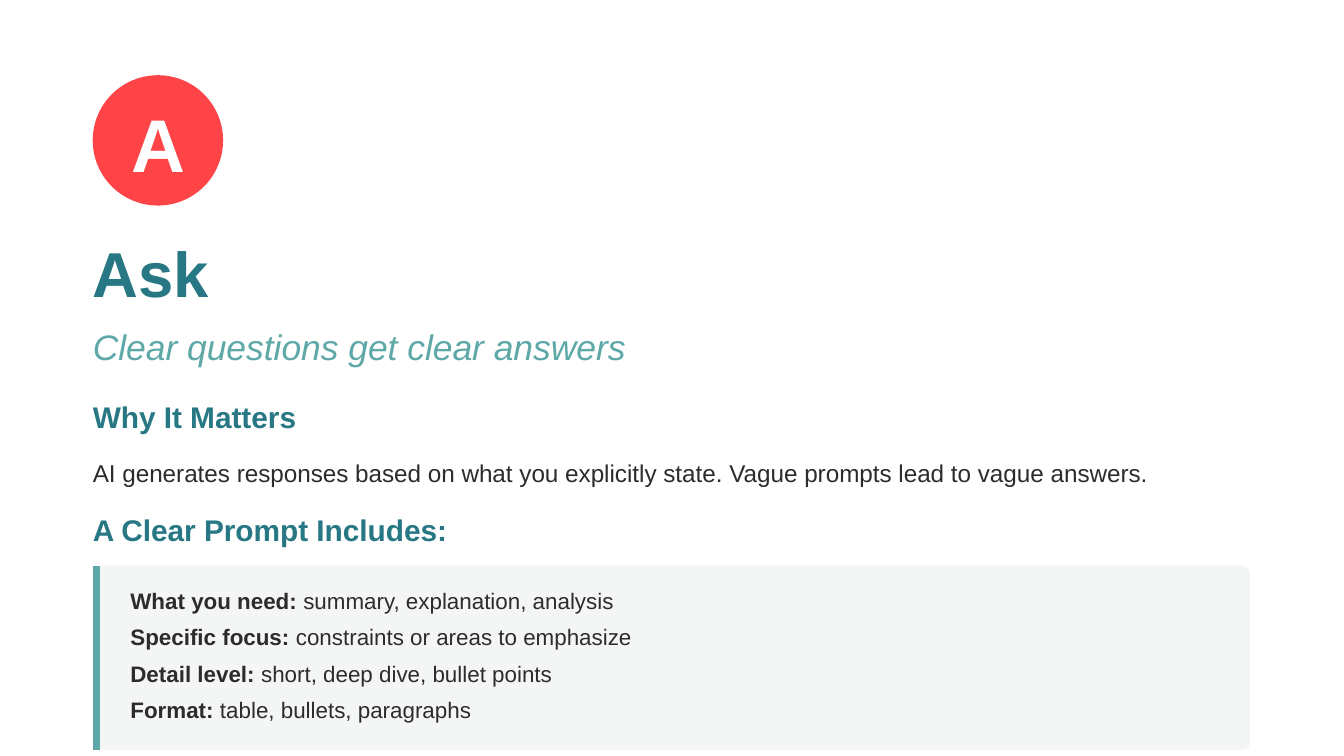
from pptx import Presentation, util as u
from pptx.dml.color import RGBColor
from pptx.enum import shapes, text
from pptx.oxml import ns
from lxml import etree

# Content
BADGE = "A"
TITLE = "Ask"
TAGLINE = "Clear questions get clear answers"
REASON_HEADING = "Why It Matters"
REASON = ("AI generates responses based on what you explicitly state. "
          "Vague prompts lead to vague answers.")
CHECKLIST_HEADING = "A Clear Prompt Includes:"
CHECKLIST = [
    ("What you need:", " summary, explanation, analysis"),
    ("Specific focus:", " constraints or areas to emphasize"),
    ("Detail level:", " short, deep dive, bullet points"),
    ("Format:", " table, bullets, paragraphs"),
]

COLORS = {"coral": "FE4447", "teal": "277884", "mint": "5EA8A7",
          "ink": "2C2C2C", "panel": "F4F6F6", "white": "FFFFFF"}
FONT = "Arial"

# Layout in inches, on a 16:9 slide
WIDTH = 10
HEIGHT = WIDTH * 9 / 16
LEFT, TEXT_WIDTH = 0.69, 8.78
BADGE_TOP, BADGE_SIZE = 0.56, 0.97
PANEL_TOP, PANEL_WIDTH, PANEL_HEIGHT = 4.21, 8.61, 1.37
PAD_X, PAD_Y = 0.28, 0.14
RULE_WIDTH = 3.75

prs = Presentation()
prs.slide_width, prs.slide_height = u.Inches(WIDTH), u.Inches(HEIGHT)
slide = prs.slides.add_slide(prs.slide_layouts[1])


def color(name):
    return RGBColor.from_string(COLORS[name])


def write(paragraphs, box, holder=None, size=12, fill="ink", bold=False,
          italic=False, align=text.PP_ALIGN.LEFT, line=None, after=0):
    """Each paragraph is a string, or a (bold label, plain rest) pair."""
    place = [u.Inches(v) for v in box]
    if holder is None:
        holder = slide.shapes.add_textbox(*place)
    holder.left, holder.top, holder.width, holder.height = place
    frame = holder.text_frame
    frame.word_wrap = True
    frame.auto_size = text.MSO_AUTO_SIZE.NONE
    frame.vertical_anchor = text.MSO_ANCHOR.TOP
    frame.margin_left = frame.margin_right = 0
    frame.margin_top = frame.margin_bottom = 0
    for i, content in enumerate(paragraphs):
        para = frame.add_paragraph() if i else frame.paragraphs[0]
        para.alignment = align
        para.space_before = u.Pt(0 if line else round(size * 0.1, 1))
        para.space_after = u.Pt(after)
        para.line_spacing = u.Pt(line) if line else 1.0
        pair = isinstance(content, tuple)
        for j, words in enumerate(content if pair else (content,)):
            run = para.add_run()
            run.text = words
            run.font.name, run.font.size = FONT, u.Pt(size)
            run.font.bold = j == 0 if pair else bold
            run.font.italic = italic
            run.font.color.rgb = color(fill)
    return holder


def add_block(kind, box, fill):
    block = slide.shapes.add_shape(kind, *[u.Inches(v) for v in box])
    block.shadow.inherit = False
    block.fill.solid()
    block.fill.fore_color.rgb = color(fill)
    block.line.fill.background()
    return block


# Letter badge: a square rounded into a circle
badge = add_block(shapes.MSO_SHAPE.ROUNDED_RECTANGLE,
                  (LEFT, BADGE_TOP, BADGE_SIZE, BADGE_SIZE), "coral")
badge.adjustments[0] = 0.5
letter_w, letter_h = 0.41, 0.64
write([BADGE], (LEFT + (BADGE_SIZE - letter_w) / 2, BADGE_TOP + (BADGE_SIZE - letter_h) / 2,
                letter_w, letter_h),
      size=40, fill="white", bold=True, align=text.PP_ALIGN.CENTER)

# Title, tagline and reason
write([TITLE], (LEFT, 1.74, TEXT_WIDTH, 0.54), slide.shapes.title,
      size=34, fill="teal", bold=True, after=10)
write([TAGLINE], (LEFT, 2.42, TEXT_WIDTH, 0.3), size=19, fill="mint", italic=True)
for heading, top in ((REASON_HEADING, 2.97), (CHECKLIST_HEADING, 3.81)):
    write([heading], (LEFT, top, TEXT_WIDTH, 0.26), size=16, fill="teal", bold=True, after=10)
write([REASON], (LEFT, 3.37, TEXT_WIDTH, 0.25), size=13, line=18.2, after=14)

# Checklist panel with its accent rule
panel = add_block(shapes.MSO_SHAPE.ROUNDED_RECTANGLE,
                  (LEFT, PANEL_TOP, PANEL_WIDTH, PANEL_HEIGHT), "panel")
panel.adjustments[0] = 0.04
rule_x = u.Inches(LEFT) + u.Pt(RULE_WIDTH / 2)
rule = slide.shapes.add_connector(shapes.MSO_CONNECTOR.STRAIGHT, rule_x, u.Inches(PANEL_TOP),
                                  rule_x, u.Inches(PANEL_TOP + PANEL_HEIGHT))
rule.line.color.rgb = color("mint")
rule.line.width = u.Pt(RULE_WIDTH)
etree.SubElement(rule._element.spPr, ns.qn("a:effectLst"))

# Checklist, raised above the panel and without bullets
checklist = write(CHECKLIST, (LEFT + PAD_X, PANEL_TOP + PAD_Y, 8.28, PANEL_HEIGHT - 2 * PAD_Y),
                  slide.placeholders[1], size=12, line=15.6, after=4)
for para in checklist.text_frame.paragraphs:
    props = para._p.get_or_add_pPr()
    props.set("marL", "0")
    props.set("indent", "0")
    etree.SubElement(props, ns.qn("a:buNone"))
slide.shapes._spTree.append(checklist._element)

prs.save("out.pptx")
